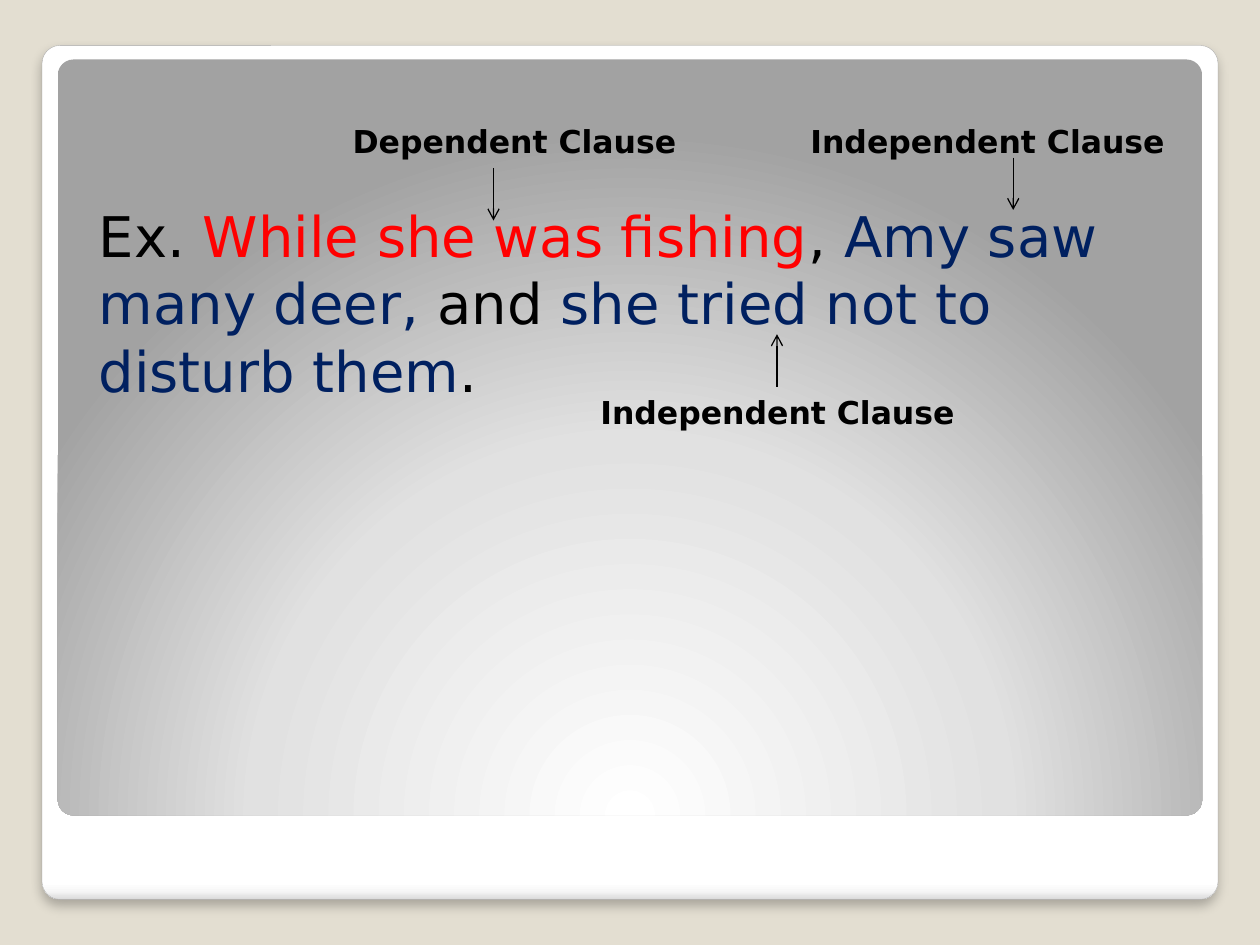
"""Build a grammar slide that labels the clauses of a compound-complex sentence."""
from pptx import Presentation
from pptx.dml.color import RGBColor
from pptx.enum.shapes import MSO_CONNECTOR, MSO_SHAPE
from pptx.enum.text import MSO_ANCHOR, PP_ALIGN
from pptx.oxml import parse_xml
from pptx.oxml.ns import nsdecls, qn
from pptx.util import Pt

BLACK = RGBColor(0x00, 0x00, 0x00)
RED = RGBColor(0xFF, 0x00, 0x00)
NAVY = RGBColor(0x00, 0x20, 0x60)
GRAY = RGBColor(0xA4, 0xA4, 0xA4)
BEIGE = RGBColor(0xE3, 0xDE, 0xD1)

FRAME_STOPS = [(0, "FFFFFF"), (98, "FFFFFF"), (99, "F7F7F7"), (100, "DADADA")]
PANEL_STOPS = [(0, "FFFFFF"), (55, "E1E1E1"), (100, "A2A2A2")]
DOWNWARD = '<a:lin ang="5400000" scaled="0"/>'
FROM_BOTTOM = (
    '<a:path path="circle">'
    '<a:fillToRect l="50000" t="175000" r="50000" b="-75000"/></a:path>'
)
SOFT_SHADOW = (
    f'<a:effectLst {nsdecls("a")}>'
    '<a:outerShdw blurRad="76200" dist="50800" dir="5400000" rotWithShape="0">'
    '<a:srgbClr val="000000"><a:alpha val="25000"/></a:srgbClr>'
    "</a:outerShdw></a:effectLst>"
)

SENTENCE = [
    ("Ex. ", BLACK),
    ("While she was fishing", RED),
    (", ", BLACK),
    ("Amy saw many deer,", NAVY),
    (" and ", BLACK),
    ("she tried not to disturb them", NAVY),
    (".", BLACK),
]
LABELS = [
    ("Dependent Clause", 162, 66, 264, PP_ALIGN.CENTER),
    ("Independent Clause", 456, 66, 246, PP_ALIGN.LEFT),
    ("Independent Clause", 336, 221, 318, PP_ALIGN.LEFT),
]
ARROWS = [(282, 96, 126), (579, 90, 120), (444, 221, 191)]


def add_span(para, text, size=18, color=BLACK, bold=False, font="DejaVu Sans"):
    """Append formatted text to a paragraph."""
    span = para.add_run()
    span.text = text
    span.font.name = font
    span.font.size = Pt(size)
    span.font.bold = bold
    span.font.color.rgb = color


class ClauseSlide:
    """Hold the style and the current slide."""

    line_width = 0.75
    corner = 0.021

    def __init__(self, deck):
        """Add a slide with the background color."""
        self.slide = deck.slides.add_slide(deck.slide_layouts[1])
        self.slide.background.fill.solid()
        self.slide.background.fill.fore_color.rgb = BEIGE

    def card(self, left, top, width, height, stops, direction, border=None):
        """Draw a rounded card with a gradient, and a shadow if it has a border."""
        card = self.slide.shapes.add_shape(
            MSO_SHAPE.ROUNDED_RECTANGLE, Pt(left), Pt(top), Pt(width), Pt(height)
        )
        card.adjustments[0] = self.corner
        properties = card.element.spPr
        stop_list = "".join(
            f'<a:gs pos="{position * 1000}"><a:srgbClr val="{color}"/></a:gs>'
            for position, color in stops
        )
        gradient = parse_xml(
            f'<a:gradFill {nsdecls("a")} rotWithShape="1">'
            f"<a:gsLst>{stop_list}</a:gsLst>{direction}</a:gradFill>"
        )
        properties.find(qn("a:prstGeom")).addnext(gradient)
        if border is None:
            card.line.fill.background()
            card.shadow.inherit = False
        else:
            card.line.color.rgb = border
            card.line.width = Pt(0.16)
            properties.append(parse_xml(SOFT_SHADOW))

    def sentence(self, left, top, width, height, parts):
        """Write the colored sentence in the body placeholder."""
        title = self.slide.shapes.title
        title.element.getparent().remove(title.element)
        body = self.slide.placeholders[1]
        body.element.getparent().append(body.element)
        body.left, body.top, body.width, body.height = map(
            Pt, (left, top, width, height)
        )
        frame = body.text_frame
        frame.word_wrap = True
        frame.vertical_anchor = MSO_ANCHOR.TOP
        frame.margin_left, frame.margin_top = Pt(14.4), Pt(7.2)
        frame.margin_right, frame.margin_bottom = Pt(7.2), Pt(3.6)
        para = frame.paragraphs[0]
        para.space_before = Pt(2.5)
        layout = para._p.get_or_add_pPr()
        layout.set("marL", "0")
        layout.set("indent", "0")
        layout.append(parse_xml(f'<a:buNone {nsdecls("a")}/>'))
        for text, color in parts:
            add_span(para, text, size=32, color=color)

    def label(self, text, left, top, width, align):
        """Write a bold clause label."""
        box = self.slide.shapes.add_textbox(Pt(left), Pt(top), Pt(width), Pt(29))
        box.text_frame.word_wrap = True
        para = box.text_frame.paragraphs[0]
        para.alignment = align
        add_span(para, text, bold=True)

    def arrow(self, x, start, end):
        """Draw a vertical arrow that points to its end."""
        arrow = self.slide.shapes.add_connector(
            MSO_CONNECTOR.STRAIGHT, Pt(x), Pt(start), Pt(x), Pt(end)
        )
        arrow.line.color.rgb = BLACK
        arrow.line.width = Pt(self.line_width)
        arrow.line._get_or_add_ln().append(
            parse_xml(f'<a:tailEnd {nsdecls("a")} type="arrow"/>')
        )
        arrow.element.spPr.append(parse_xml(f'<a:effectLst {nsdecls("a")}/>'))


def main():
    """Build and save the deck."""
    deck = Presentation()
    deck.slide_width, deck.slide_height = Pt(720), Pt(540)
    page = ClauseSlide(deck)
    page.card(24, 26, 672, 488, FRAME_STOPS, DOWNWARD, border=GRAY)
    page.card(33, 34, 654, 432, PANEL_STOPS, FROM_BOTTOM)
    page.sentence(42, 108, 644, 168, SENTENCE)
    for label in LABELS:
        page.label(*label)
    for arrow in ARROWS:
        page.arrow(*arrow)
    deck.save("out.pptx")


if __name__ == "__main__":
    main()
